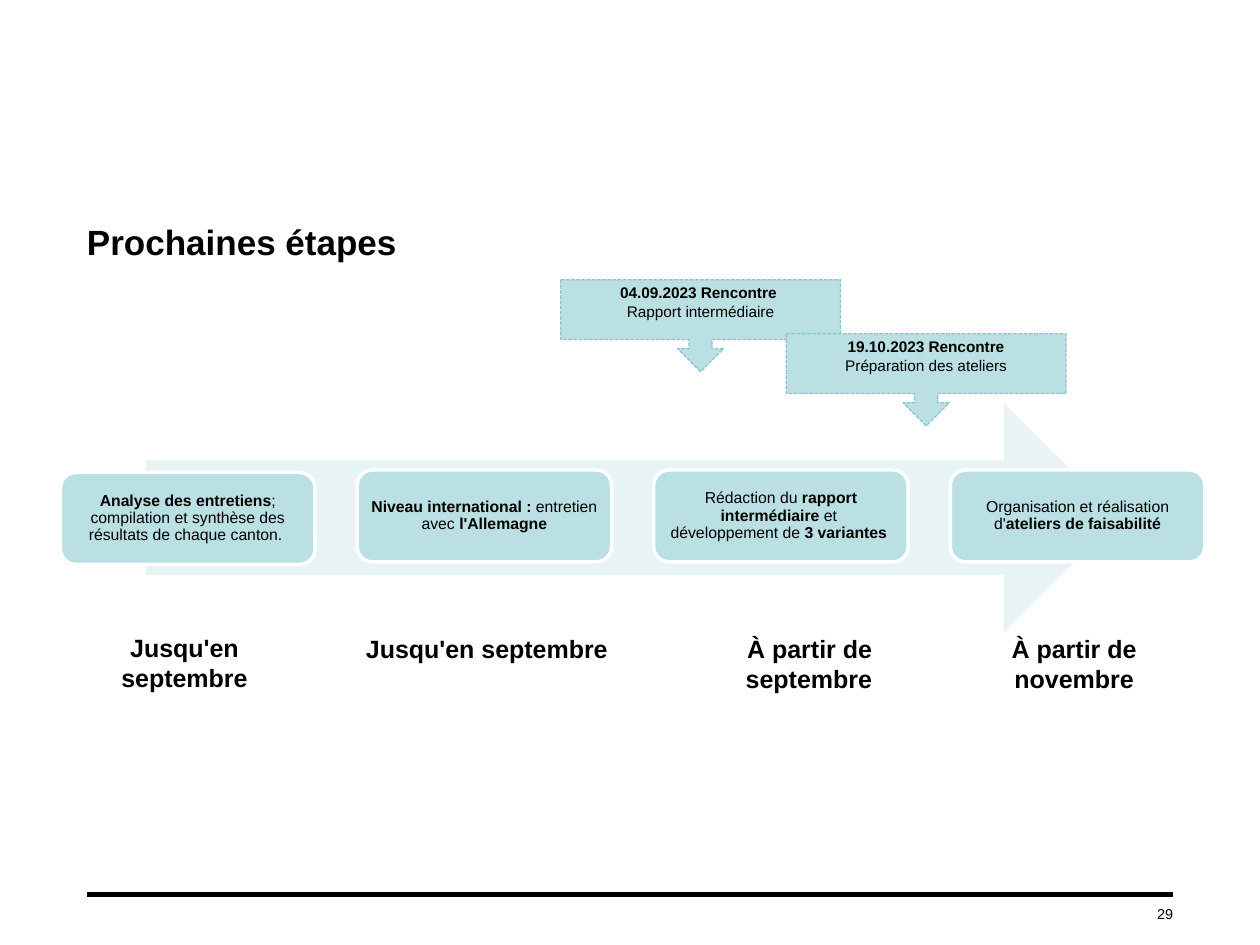
from dataclasses import dataclass

from lxml import etree
from pptx import Presentation
from pptx.dml.color import RGBColor
from pptx.enum import dml, shapes, text
from pptx.oxml.ns import qn
from pptx.util import Inches, Pt

BLACK, WHITE = "000000", "FFFFFF"
TEAL, PALE_TEAL, DARK_TEAL = "BBE0E3", "E7F3F4", "8AC6CD"
LEFT, CENTER, RIGHT = text.PP_ALIGN.LEFT, text.PP_ALIGN.CENTER, text.PP_ALIGN.RIGHT
TOP, MIDDLE, BOTTOM = text.MSO_ANCHOR.TOP, text.MSO_ANCHOR.MIDDLE, text.MSO_ANCHOR.BOTTOM
STEP_LEFT, STEP_PITCH = 0.48, 2.354


@dataclass
class Step:
    top: float
    body: str


@dataclass
class Period:
    left: float
    top: float
    width: float
    label: str
    align: text.PP_ALIGN = CENTER


@dataclass
class Meeting:
    left: float
    top: float
    lines: list[str]


STEPS = [
    Step(3.75, "**Analyse des entretiens**; compilation et synthèse des résultats de chaque canton. "),
    Step(3.73, "**Niveau international : **entretien avec **l'Allemagne**"),
    Step(3.73, "Rédaction du **rapport intermédiaire **et \vdéveloppement de **3 variantes **"),
    Step(3.73, "Organisation et réalisation d'**ateliers de faisabilité**"),
]
PERIODS = [
    Period(0.65, 4.97, 1.63, "Jusqu'en septembre"),
    Period(2.8, 4.98, 2.13, "Jusqu'en septembre"),
    Period(5.45, 4.98, 1.57, "À partir de septembre", RIGHT),
    Period(7.74, 4.98, 1.57, "À partir de novembre"),
]
MEETINGS = [
    Meeting(4.45, 2.22, ["**04.09.2023 Rencontre **", "Rapport intermédiaire"]),
    Meeting(6.24, 2.65, ["**19.10.2023 Rencontre**", "Préparation des ateliers"]),
]


def rgb(value: str) -> RGBColor:
    return RGBColor.from_string(value)


def write(sp, lines: list[str], size: float, align=CENTER, anchor=TOP,
          inset=(0.1, 0.05), spacing: float | None = None) -> None:
    """Fill a shape with paragraphs; **double stars** mark bold runs."""
    tf = sp.text_frame
    tf.word_wrap = True
    tf.vertical_anchor = anchor
    tf.margin_left = tf.margin_right = Inches(inset[0])
    tf.margin_top = tf.margin_bottom = Inches(inset[1])
    for i, line in enumerate(lines):
        p = tf.add_paragraph() if i else tf.paragraphs[0]
        p.alignment = align
        if spacing:
            p.line_spacing = spacing
        p.font.name, p.font.size = "Arial", Pt(size)
        p.font.color.rgb = rgb(BLACK)
        for j, part in enumerate(line.split("**")):
            for k, piece in enumerate(part.split("\v")):
                if k:
                    p.add_line_break()
                if piece:
                    r = p.add_run()
                    r.text = piece
                    r.font.name, r.font.size = "Arial", Pt(size)
                    r.font.color.rgb = rgb(BLACK)
                    r.font.bold = j % 2 == 1


def add_box(slide, left: float, top: float, width: float, height: float):
    return slide.shapes.add_textbox(Inches(left), Inches(top), Inches(width), Inches(height))


def add_shape(slide, kind, left: float, top: float, width: float, height: float,
              fill: str, line: str | None = None, weight: float = 0):
    sp = slide.shapes.add_shape(kind, Inches(left), Inches(top), Inches(width), Inches(height))
    sp.shadow.inherit = False
    sp.fill.solid()
    sp.fill.fore_color.rgb = rgb(fill)
    if line:
        sp.line.color.rgb = rgb(line)
        sp.line.width = Pt(weight)
    else:
        sp.line.fill.background()
    return sp


def add_title(slide, label: str) -> None:
    title = slide.shapes.title
    title.left, title.top = Inches(0.69), Inches(1.71)
    title.width, title.height = Inches(8.62), Inches(0.27)
    write(title, [f"**{label}**"], 20, LEFT, inset=(0, 0.04))
    title.text_frame.auto_size = text.MSO_AUTO_SIZE.NONE


def add_footer(slide, number: int) -> None:
    rule = slide.shapes.add_connector(shapes.MSO_CONNECTOR.STRAIGHT, Inches(0.69), Inches(7.1),
                                      Inches(9.31), Inches(7.1))
    rule.line.color.rgb = rgb(BLACK)
    rule.line.width = Pt(3)
    etree.SubElement(rule._element.spPr, qn("a:effectLst"))
    write(add_box(slide, 8.5, 7.14, 0.81, 0.18), [str(number)], 8.2, RIGHT, BOTTOM, (0, 0))


def add_step(slide, index: int, step: Step) -> None:
    sp = add_shape(slide, shapes.MSO_SHAPE.ROUNDED_RECTANGLE, STEP_LEFT + index * STEP_PITCH,
                   step.top, 2.02, 0.73, TEAL, WHITE, 2)
    write(sp, [step.body], 9, anchor=MIDDLE, inset=(0.03, 0.03), spacing=0.9)


def add_period(slide, period: Period) -> None:
    sp = add_box(slide, period.left, period.top, period.width, 0.34)
    write(sp, [f"**{period.label}**"], 14.3, period.align)


def add_meeting(slide, meeting: Meeting) -> None:
    sp = add_shape(slide, shapes.MSO_SHAPE.DOWN_ARROW_CALLOUT, meeting.left, meeting.top,
                   2.22, 0.73, TEAL, DARK_TEAL, 0.75)
    sp.line.dash_style = dml.MSO_LINE.SQUARE_DOT
    write(sp, meeting.lines, 8.8, inset=(0.07, 0.03))


def main() -> None:
    prs = Presentation()
    prs.slide_width, prs.slide_height = Inches(10), Inches(7.5)
    slide = prs.slides.add_slide(prs.slide_layouts[5])
    add_footer(slide, 29)
    add_title(slide, "Prochaines étapes")
    add_shape(slide, shapes.MSO_SHAPE.RIGHT_ARROW, 1.16, 3.2, 7.72, 1.82, PALE_TEAL)
    for i, step in enumerate(STEPS):
        add_step(slide, i, step)
    for period in PERIODS:
        add_period(slide, period)
    for meeting in MEETINGS:
        add_meeting(slide, meeting)
    prs.save("out.pptx")


if __name__ == "__main__":
    main()
